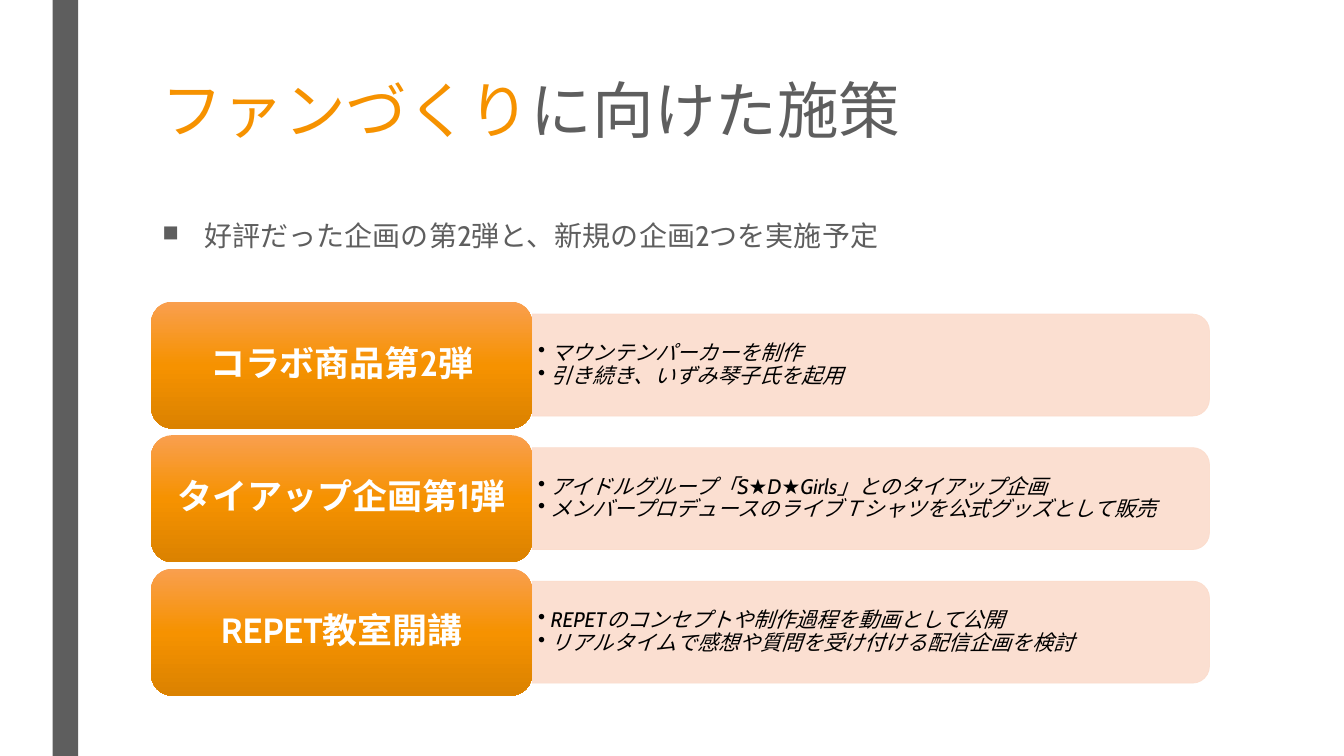
from copy import deepcopy
from dataclasses import dataclass

from lxml.etree import SubElement
from pptx import Presentation
from pptx.dml.color import RGBColor as Rgb
from pptx.enum.shapes import MSO_SHAPE as Preset
from pptx.enum.text import MSO_ANCHOR as Anchor, PP_ALIGN as Align
from pptx.oxml.ns import qn
from pptx.shapes.autoshape import Shape
from pptx.shapes.shapetree import SlideShapes
from pptx.text.text import TextFrame
from pptx.util import Cm, Pt


@dataclass(frozen=True)
class Theme:
    """Colours, font and type sizes of the slide."""
    font: str = "Cabin"
    gray: str = "5E5E5E"
    orange: str = "F69200"
    peach: str = "FBDCCC"
    white: str = "FFFFFF"
    black: str = "000000"
    gradient: tuple[str, ...] = ("F99F4F", "F69200", "DB8200")
    panel_opacity: int = 90
    title_size: int = 44
    lead_size: int = 20
    label_size: int = 25
    detail_size: int = 15


@dataclass(frozen=True)
class Box:
    """Place and size in centimetres."""
    left: float
    top: float
    width: float
    height: float

    def lengths(self) -> tuple[Cm, Cm, Cm, Cm]:
        """Return the four values as lengths."""
        return Cm(self.left), Cm(self.top), Cm(self.width), Cm(self.height)


@dataclass(frozen=True)
class Measure:
    """One planned measure and its details."""
    label: str
    details: tuple[str, ...]


THEME = Theme()
MEASURES = (
    Measure("コラボ商品第2弾", ("マウンテンパーカーを制作", "引き続き、いずみ琴子氏を起用")),
    Measure("タイアップ企画第1弾", (
        "アイドルグループ「S★D★Girls」とのタイアップ企画",
        "メンバープロデュースのライブＴシャツを公式グッズとして販売")),
    Measure("REPET教室開講", (
        "REPETのコンセプトや制作過程を動画として公開",
        "リアルタイムで感想や質問を受け付ける配信企画を検討")),
)
FIRST_CENTER, ROW_PITCH = 9.2, 3.365
LABEL_LEFT, LABEL_WIDTH, LABEL_HEIGHT = 3.81, 9.6, 3.2
PANEL_LEFT, PANEL_WIDTH, PANEL_HEIGHT = 13.41, 17.07, 2.57
DETAIL_WIDTH, DETAIL_HEIGHT = 16.94, 2.31


def write(frame: TextFrame, paragraphs: list[list[tuple[str, str]]], *, size: int,
          bold: bool = False, italic: bool = False, align: Align = Align.LEFT,
          anchor: Anchor = Anchor.TOP, spacing: float = 0.9, before: float = 0,
          after: float = 0, bullet: str = "", bullet_scale: int = 100,
          indent: float = 0, inset: tuple[float, float] = (0.25, 0.13)) -> None:
    """Write paragraphs of (text, colour) runs in the given format."""
    frame.word_wrap = True
    frame.vertical_anchor = anchor
    frame.margin_left = frame.margin_right = Cm(inset[0])
    frame.margin_top = frame.margin_bottom = Cm(inset[1])
    for index, runs in enumerate(paragraphs):
        paragraph = frame.add_paragraph() if index else frame.paragraphs[0]
        paragraph.alignment = align
        paragraph.line_spacing = spacing
        paragraph.space_before, paragraph.space_after = Pt(before), Pt(after)
        if bullet:
            properties = paragraph._p.get_or_add_pPr()
            properties.set("marL", str(Cm(indent)))
            properties.set("indent", str(-Cm(indent)))
            SubElement(properties, qn("a:buSzPct"), val=str(bullet_scale * 1000))
            SubElement(properties, qn("a:buChar"), char=bullet)
        for text, color in runs:
            run = paragraph.add_run()
            run.text = text
            run.font.name, run.font.size = THEME.font, Pt(size)
            run.font.bold, run.font.italic = bold, italic
            run.font.color.rgb = Rgb.from_string(color)


def add_text(shapes: SlideShapes, box: Box) -> TextFrame:
    """Add a text box and return its frame."""
    return shapes.add_textbox(*box.lengths()).text_frame


def add_block(shapes: SlideShapes, preset: Preset, box: Box, color: str) -> Shape:
    """Add a flat preset shape without outline."""
    block = shapes.add_shape(preset, *box.lengths())
    block.shadow.inherit = False
    block.fill.solid()
    block.fill.fore_color.rgb = Rgb.from_string(color)
    block.line.fill.background()
    return block


def shade(label: Shape) -> None:
    """Fill a label with the vertical three-stop gradient."""
    label.fill.gradient()
    label.fill.gradient_angle = 270
    stop_list = label._element.spPr.find(qn("a:gradFill")).find(qn("a:gsLst"))
    stop_list.insert(1, deepcopy(stop_list[0]))
    stop_list[1].set("pos", "50000")
    for stop, color in zip(label.fill.gradient_stops, THEME.gradient):
        stop.color.rgb = Rgb.from_string(color)


def add_panel(shapes: SlideShapes, center: float) -> None:
    """Add the translucent panel rounded on its right side."""
    upright = Box(PANEL_LEFT + (PANEL_WIDTH - PANEL_HEIGHT) / 2,
                  center - PANEL_WIDTH / 2, PANEL_HEIGHT, PANEL_WIDTH)
    panel = add_block(shapes, Preset.ROUND_2_SAME_RECTANGLE, upright, THEME.peach)
    panel.rotation = 90
    panel.line.color.rgb = Rgb.from_string(THEME.peach)
    panel.line.width = Pt(0.5)
    for color in panel._element.spPr.iter(qn("a:srgbClr")):
        SubElement(color, qn("a:alpha"), val=str(THEME.panel_opacity * 1000))


def add_measure(shapes: SlideShapes, measure: Measure, center: float) -> None:
    """Add one row: panel, details and label."""
    add_panel(shapes, center)
    details = add_text(shapes, Box(PANEL_LEFT, center - DETAIL_HEIGHT / 2,
                                   DETAIL_WIDTH, DETAIL_HEIGHT))
    write(details, [[(detail, THEME.black)] for detail in measure.details],
          size=THEME.detail_size, italic=True, anchor=Anchor.MIDDLE,
          bullet="•", indent=0.32, inset=(0.15, 0.08))
    label = add_block(shapes, Preset.ROUNDED_RECTANGLE,
                      Box(LABEL_LEFT, center - LABEL_HEIGHT / 2, LABEL_WIDTH, LABEL_HEIGHT),
                      THEME.orange)
    shade(label)
    write(label.text_frame, [[(measure.label, THEME.white)]], size=THEME.label_size,
          bold=True, align=Align.CENTER, anchor=Anchor.MIDDLE)


def main() -> None:
    """Build and save the slide."""
    deck = Presentation()
    deck.slide_width, deck.slide_height = Cm(33.87), Cm(19.05)
    shapes = deck.slides.add_slide(deck.slide_layouts[6]).shapes
    add_block(shapes, Preset.RECTANGLE, Box(1.33, 0, 0.64, 19.05), THEME.gray)
    write(add_text(shapes, Box(3.81, 1.91, 26.67, 4.11)),
          [[("ファンづくり", THEME.orange), ("に向けた施策", THEME.gray)]],
          size=THEME.title_size, spacing=0.89)
    write(add_text(shapes, Box(3.84, 5.44, 23.83, 1.73)),
          [[("好評だった企画の第2弾と、新規の企画2つを実施予定", THEME.gray)]],
          size=THEME.lead_size, spacing=0.94, before=10, after=2,
          bullet="■", bullet_scale=80, indent=1.07)
    for row, measure in enumerate(MEASURES):
        add_measure(shapes, measure, FIRST_CENTER + row * ROW_PITCH)
    deck.save("out.pptx")


if __name__ == "__main__":
    main()
